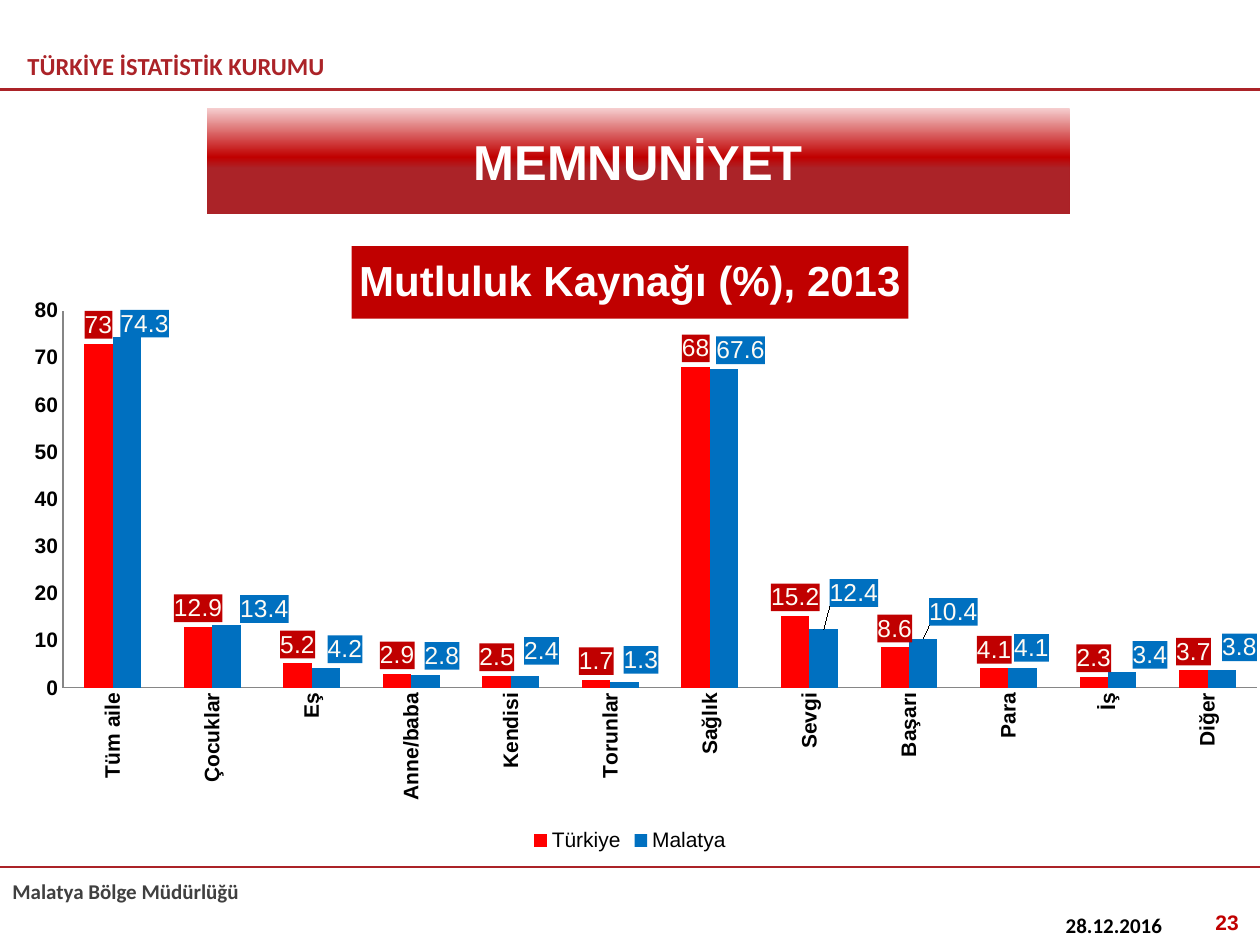
"""Build the slide on sources of happiness in Türkiye and Malatya."""
from typing import NamedTuple

from lxml import etree
from pptx import Presentation
from pptx.chart.data import CategoryChartData
from pptx.dml.color import RGBColor
from pptx.enum.chart import XL_CHART_TYPE, XL_LABEL_POSITION, XL_LEGEND_POSITION, XL_TICK_MARK
from pptx.enum.shapes import MSO_CONNECTOR
from pptx.enum.text import MSO_ANCHOR, PP_ALIGN
from pptx.oxml import parse_xml
from pptx.oxml.ns import nsdecls, qn
from pptx.util import Inches, Pt

COLUMNS = XL_CHART_TYPE.COLUMN_CLUSTERED
ABOVE = XL_LABEL_POSITION.OUTSIDE_END
BOTTOM = XL_LEGEND_POSITION.BOTTOM
NO_TICK = XL_TICK_MARK.NONE
STRAIGHT = MSO_CONNECTOR.STRAIGHT
MIDDLE, TOP = MSO_ANCHOR.MIDDLE, MSO_ANCHOR.TOP
LEFT, CENTER, RIGHT = PP_ALIGN.LEFT, PP_ALIGN.CENTER, PP_ALIGN.RIGHT

CRIMSON, RED, BLUE, CREAM = "AB2328", "C00000", "0070C0", "FEFBF4"


class Label(NamedTuple):
    text: str
    left: float
    top: float
    width: float
    height: float
    size: float
    color: str
    font: str = "Calibri"
    align: PP_ALIGN = LEFT
    anchor: MSO_ANCHOR = TOP
    inset_top: float = 0.05
    inset_bottom: float = 0.05
    outline: str = ""


class Region(NamedTuple):
    name: str
    values: tuple
    bar_color: str
    label_color: str
    label_shifts: tuple = ()


LABELS = (
    Label("TÜRKİYE İSTATİSTİK KURUMU", 0.12, 0.19, 3.54, 0.39, 14, CRIMSON,
          anchor=MIDDLE, inset_top=0.27, inset_bottom=0),
    Label("Malatya Bölge Müdürlüğü", 0, 6.92, 4.29, 0.52, 12, "404040"),
    Label("28.12.2016", 8.36, 7.19, 2.33, 0.52, 12, "000000"),
    Label("23", 7.6, 7.17, 2.33, 0.52, 12, RED, "Arial", RIGHT, outline=CRIMSON),
)
RULE_TOPS = (0.71, 6.88)
BANNER_STOPS = ((0, "F5CDCE"), (46, RED), (57, CRIMSON))
SOURCES = ("Tüm aile", "Çocuklar", "Eş", "Anne/baba", "Kendisi", "Torunlar",
           "Sağlık", "Sevgi", "Başarı", "Para", "İş", "Diğer")
REGIONS = (
    Region("Türkiye", (73, 12.9, 5.2, 2.9, 2.5, 1.7, 68, 15.2, 8.6, 4.1, 2.3, 3.7),
           "FF0000", RED),
    Region("Malatya", (74.3, 13.4, 4.2, 2.8, 2.4, 1.3, 67.6, 12.4, 10.4, 4.1, 3.4, 3.8),
           BLUE, BLUE,
           ((0.014, 0.008), (0.03, 0.005), (0.015, 0), (0.013, 0), (0.013, -0.011),
            (0.013, -0.005), (0.013, 0), (0.024, -0.028), (0.024, -0.013),
            (0.007, -0.003), (0.022, 0.003), (0.014, -0.006))),
)


def rgb(color: str) -> RGBColor:
    """Turn a hex string into a colour."""
    return RGBColor.from_string(color)


def set_font(font, size: float, color: str, bold: bool, name: str = "Arial") -> None:
    """Format a font."""
    font.size, font.bold, font.name = Pt(size), bold, name
    font.color.rgb = rgb(color)


def solid(tag: str, color: str):
    """Make an element that holds a solid fill."""
    return parse_xml(f'<{tag} {nsdecls("a", "c")}><a:solidFill>'
                     f'<a:srgbClr val="{color}"/></a:solidFill></{tag}>')


def manual_layout(inner: bool = False, **values: float):
    """Make a chart layout from fractions of the chart."""
    layout = etree.Element(qn("c:layout"))
    manual = etree.SubElement(layout, qn("c:manualLayout"))
    if inner:
        for key, value in (("layoutTarget", "inner"), ("xMode", "edge"), ("yMode", "edge")):
            etree.SubElement(manual, qn(f"c:{key}"), val=value)
    for key, value in values.items():
        etree.SubElement(manual, qn(f"c:{key}"), val=str(value))
    return layout


def add_label(page, label: Label) -> None:
    """Add a bold line of text."""
    box = page.shapes.add_textbox(*map(Inches, label[1:5]))
    frame = box.text_frame
    frame.word_wrap = True
    frame.vertical_anchor = label.anchor
    frame.margin_top, frame.margin_bottom = Inches(label.inset_top), Inches(label.inset_bottom)
    frame.text = label.text
    para = frame.paragraphs[0]
    para.alignment = label.align
    span = para.runs[0]
    set_font(span.font, label.size, label.color, True, label.font)
    if label.outline:
        line = solid("a:ln", label.outline)
        line.set("w", str(Pt(0.75)))
        span.font._element.insert(0, line)


def add_rule(page, top: float) -> None:
    """Draw a line across the page."""
    rule = page.shapes.add_connector(STRAIGHT, 0, Inches(top), Inches(10), Inches(top))
    rule.line.color.rgb = rgb(CRIMSON)
    rule.line.width = Pt(1.5)
    etree.SubElement(rule._element.spPr, qn("a:effectLst"))


def format_banner(title) -> None:
    """Turn the title into a gradient banner."""
    title.left, title.top = Inches(1.64), Inches(0.86)
    title.width, title.height = Inches(6.85), Inches(0.84)
    title.fill.gradient()
    title.fill.gradient_angle = 270
    stops = title._element.spPr.find(".//" + qn("a:gsLst"))
    stops[:] = []
    for percent, color in BANNER_STOPS:
        stop = etree.SubElement(stops, qn("a:gs"), pos=str(percent * 1000))
        etree.SubElement(stop, qn("a:srgbClr"), val=color)
    title.text_frame.text = "MEMNUNİYET"
    title.text_frame.vertical_anchor = MIDDLE
    para = title.text_frame.paragraphs[0]
    para.alignment = CENTER
    set_font(para.runs[0].font, 28, "FFFFFF", True)


def format_value_label(label, element, color: str) -> None:
    """Format value labels and fill their background."""
    set_font(label.font, 14, CREAM, False)
    label.position = ABOVE
    element.find(qn("c:txPr")).addprevious(solid("c:spPr", color))


def format_series(series, region: Region) -> None:
    """Colour a series and place its value labels."""
    series.format.fill.solid()
    series.format.fill.fore_color.rgb = rgb(region.bar_color)
    labels = series.data_labels
    labels.show_value = True
    format_value_label(labels, labels._element, region.label_color)
    for index, (across, down) in enumerate(region.label_shifts):
        label = series.points[index].data_label
        label.position = ABOVE
        element = labels._element.findall(qn("c:dLbl"))[index]
        format_value_label(label, element, region.label_color)
        element.find(qn("c:idx")).addnext(manual_layout(x=across, y=down))


def add_happiness_chart(page) -> None:
    """Add the column chart of sources of happiness."""
    data = CategoryChartData()
    data.categories = SOURCES
    for region in REGIONS:
        data.add_series(region.name, region.values)
    chart = page.shapes.add_chart(COLUMNS, 0, Inches(1.8), Inches(10), Inches(5), data).chart
    set_font(chart.font, 10, "000000", False)
    chart.has_title = True
    heading = chart.chart_title
    heading.text_frame.text = "Mutluluk Kaynağı (%), 2013"
    set_font(heading.text_frame.paragraphs[0].runs[0].font, 24, "FFFFFF", True)
    heading.include_in_layout = False
    heading._element.append(solid("c:spPr", RED))
    chart.has_legend = True
    chart.legend.position = BOTTOM
    chart.legend.include_in_layout = False
    set_font(chart.legend.font, 12, "000000", False)
    for axis in (chart.category_axis, chart.value_axis):
        axis.major_tick_mark = axis.minor_tick_mark = NO_TICK
        axis.has_major_gridlines = False
        axis.format.line.color.rgb = rgb("868686")
        set_font(axis.tick_labels.font, 12, "000000", True)
    turned = chart.category_axis._element.find(qn("c:txPr")).find(qn("a:bodyPr"))
    turned.set("rot", "-5400000")
    turned.set("vert", "horz")
    chart.value_axis.minimum_scale, chart.value_axis.maximum_scale = 0, 80
    chart.value_axis.major_unit = 10
    plot = chart.plots[0]
    plot.gap_width, plot.overlap, plot.vary_by_categories = 150, 0, False
    for series, region in zip(plot.series, REGIONS):
        format_series(series, region)
    area = chart._chartSpace.chart.plotArea
    for layout in area.findall(qn("c:layout")):
        area.remove(layout)
    area.insert(0, manual_layout(True, x=0.05, y=0.133, w=0.948, h=0.599))


def main() -> None:
    """Build and save the deck."""
    deck = Presentation()
    deck.slide_width, deck.slide_height = Inches(10), Inches(7.5)
    page = deck.slides.add_slide(deck.slide_layouts[5])
    for label in LABELS:
        add_label(page, label)
    for top in RULE_TOPS:
        add_rule(page, top)
    format_banner(page.shapes.title)
    add_happiness_chart(page)
    deck.save("out.pptx")


if __name__ == "__main__":
    main()
